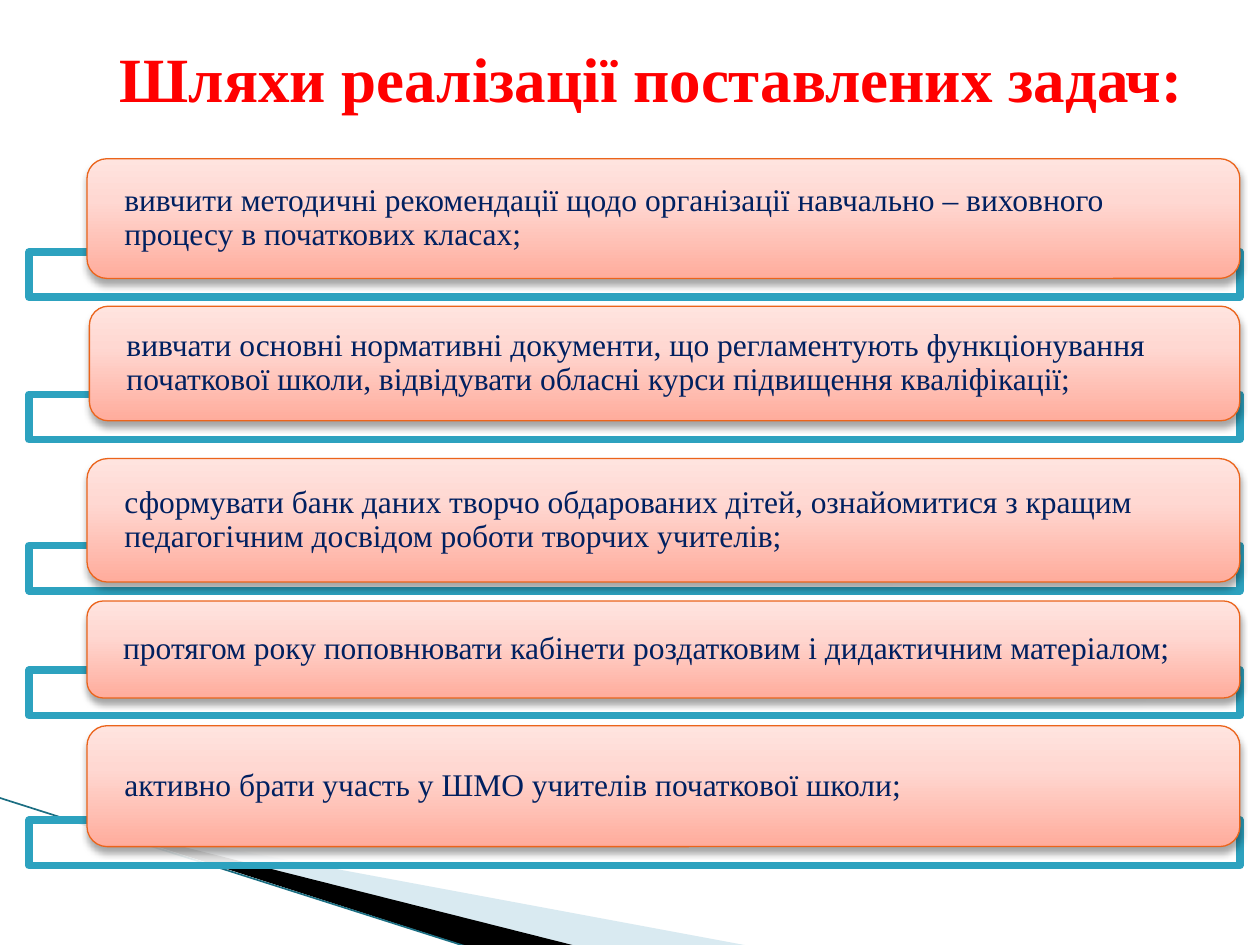
from dataclasses import dataclass

from lxml import etree
from pptx import Presentation
from pptx.dml.color import RGBColor
from pptx.enum.shapes import MSO_CONNECTOR, MSO_SHAPE
from pptx.enum.text import MSO_ANCHOR, MSO_AUTO_SIZE, PP_ALIGN
from pptx.oxml.ns import qn
from pptx.util import Inches, Pt

RECTANGLE, ROUNDED = MSO_SHAPE.RECTANGLE, MSO_SHAPE.ROUNDED_RECTANGLE
STRAIGHT = MSO_CONNECTOR.STRAIGHT
MIDDLE, NO_AUTOFIT = MSO_ANCHOR.MIDDLE, MSO_AUTO_SIZE.NONE
CENTER, LEFT = PP_ALIGN.CENTER, PP_ALIGN.LEFT


@dataclass(frozen=True)
class Theme:
    font: str = "Times New Roman"
    title_size: int = 36
    body_size: int = 18
    title: str = "FF0000"
    body: str = "002060"
    bar_fill: str = "FFFFFF"
    bar_line: str = "2DA2BF"
    card_line: str = "EB641B"
    card_stops: tuple = ((0, "FFAC9C"), (65, "FFD8D2"), (100, "FFE4DF"))
    shadow: str = "000000"
    wedge_light: str = "A0CBDC"
    wedge_dark: str = "000000"
    wedge_edge: str = "1B6E82"


theme = Theme()
presentation = Presentation()
presentation.slide_width, presentation.slide_height = Inches(10), Inches(7.5)
slide = presentation.slides.add_slide(presentation.slide_layouts[5])


def place(*shares):
    """Turn alternating x and y percentages of the slide into lengths."""
    sides = (presentation.slide_width, presentation.slide_height)
    return [round(share / 100 * sides[i % 2]) for i, share in enumerate(shares)]


def add_color(parent, color, alpha=100):
    """Append an RGB colour element with its opacity in percent."""
    element = etree.SubElement(parent, qn("a:srgbClr"), val=color)
    if alpha < 100:
        etree.SubElement(element, qn("a:alpha"), val=str(alpha * 1000))


# Corner wedges behind the list, as shares of the slide
wedges = [
    (theme.wedge_light, 40, [(5.5, 86.7), (59.5, 100.1), (45.6, 100.1)]),
    (theme.wedge_dark, 100, [(5.3, 86.5), (45.7, 100.1), (37.2, 100.2)]),
]
for color, alpha, corners in wedges:
    start, *others = [place(*corner) for corner in corners]
    builder = slide.shapes.build_freeform(*start)
    builder.add_line_segments(others, close=True)
    wedge = builder.convert_to_shape()
    wedge.shadow.inherit = False
    wedge.line.fill.background()
    solid = etree.Element(qn("a:solidFill"))
    add_color(solid, color, alpha)
    wedge.element.spPr.find(qn("a:custGeom")).addnext(solid)

edge = slide.shapes.add_connector(STRAIGHT, *place(-0.1, 84.4, 37.1, 100.2))
edge.line.color.rgb = RGBColor.from_string(theme.wedge_edge)
edge.line.width = Pt(0.95)
etree.SubElement(edge.element.spPr, qn("a:effectLst"))

# Title
title = slide.shapes.title
title.left, title.top, title.width, title.height = place(6.7, 3.87, 90, 8.53)
frame = title.text_frame
frame.text = "Шляхи реалізації поставлених задач:"
frame.auto_size, frame.vertical_anchor = NO_AUTOFIT, MIDDLE
paragraph = frame.paragraphs[0]
paragraph.alignment = CENTER
paragraph.font.name, paragraph.font.size = theme.font, Pt(theme.title_size)
paragraph.font.bold = True
paragraph.font.color.rgb = RGBColor.from_string(theme.title)

# Each row: bar top, card left, card top, card height, text
right_edge = 98.4
rows = [
    (26.67, 6.9, 16.8, 12.67, "вивчити методичні рекомендації щодо організації "
     "навчально – виховного процесу в початкових класах;"),
    (41.73, 7.1, 32.4, 12.13, "вивчати основні нормативні документи, що "
     "регламентують функціонування початкової школи, відвідувати обласні "
     "курси підвищення кваліфікації;"),
    (57.73, 6.9, 48.53, 13.07, "сформувати банк даних творчо обдарованих дітей, "
     "ознайомитися з кращим педагогічним досвідом роботи творчих учителів;"),
    (70.93, 6.9, 63.6, 10.27, "протягом року поповнювати кабінети роздатковим "
     "і дидактичним матеріалом;"),
    (86.8, 6.9, 76.8, 12.8, "активно брати участь у ШМО учителів "
     "початкової школи;"),
]
for bar_top, card_left, card_top, card_height, text in rows:
    bar = slide.shapes.add_shape(RECTANGLE, *place(2.3, bar_top, 96.1, 4.8))
    bar.shadow.inherit = False
    solid = etree.Element(qn("a:solidFill"))
    add_color(solid, theme.bar_fill, 90)
    bar.element.spPr.find(qn("a:prstGeom")).addnext(solid)
    bar.line.color.rgb = RGBColor.from_string(theme.bar_line)
    bar.line.width = Pt(4.33)

    card = slide.shapes.add_shape(
        ROUNDED, *place(card_left, card_top, right_edge - card_left, card_height))
    card.shadow.inherit = False
    properties = card.element.spPr
    shadow = etree.SubElement(
        properties.find(qn("a:effectLst")), qn("a:outerShdw"), blurRad=str(Pt(4)),
        dist=str(Pt(3)), dir="5400000", rotWithShape="0")
    add_color(shadow, theme.shadow, 35)
    gradient = etree.Element(qn("a:gradFill"), rotWithShape="1")
    stops = etree.SubElement(gradient, qn("a:gsLst"))
    for position, color in theme.card_stops:
        add_color(etree.SubElement(stops, qn("a:gs"), pos=str(position * 1000)), color)
    etree.SubElement(gradient, qn("a:lin"), ang="16200000", scaled="0")
    properties.find(qn("a:prstGeom")).addnext(gradient)
    card.line.color.rgb = RGBColor.from_string(theme.card_line)
    card.line.width = Pt(0.75)

    frame = card.text_frame
    frame.text = text
    frame.word_wrap, frame.vertical_anchor = True, MIDDLE
    frame.margin_left = frame.margin_right = Inches(0.25)
    frame.margin_top = frame.margin_bottom = 0
    paragraph = frame.paragraphs[0]
    paragraph.alignment, paragraph.line_spacing = LEFT, 0.9
    paragraph.font.name, paragraph.font.size = theme.font, Pt(theme.body_size)
    paragraph.font.color.rgb = RGBColor.from_string(theme.body)

presentation.save("out.pptx")
